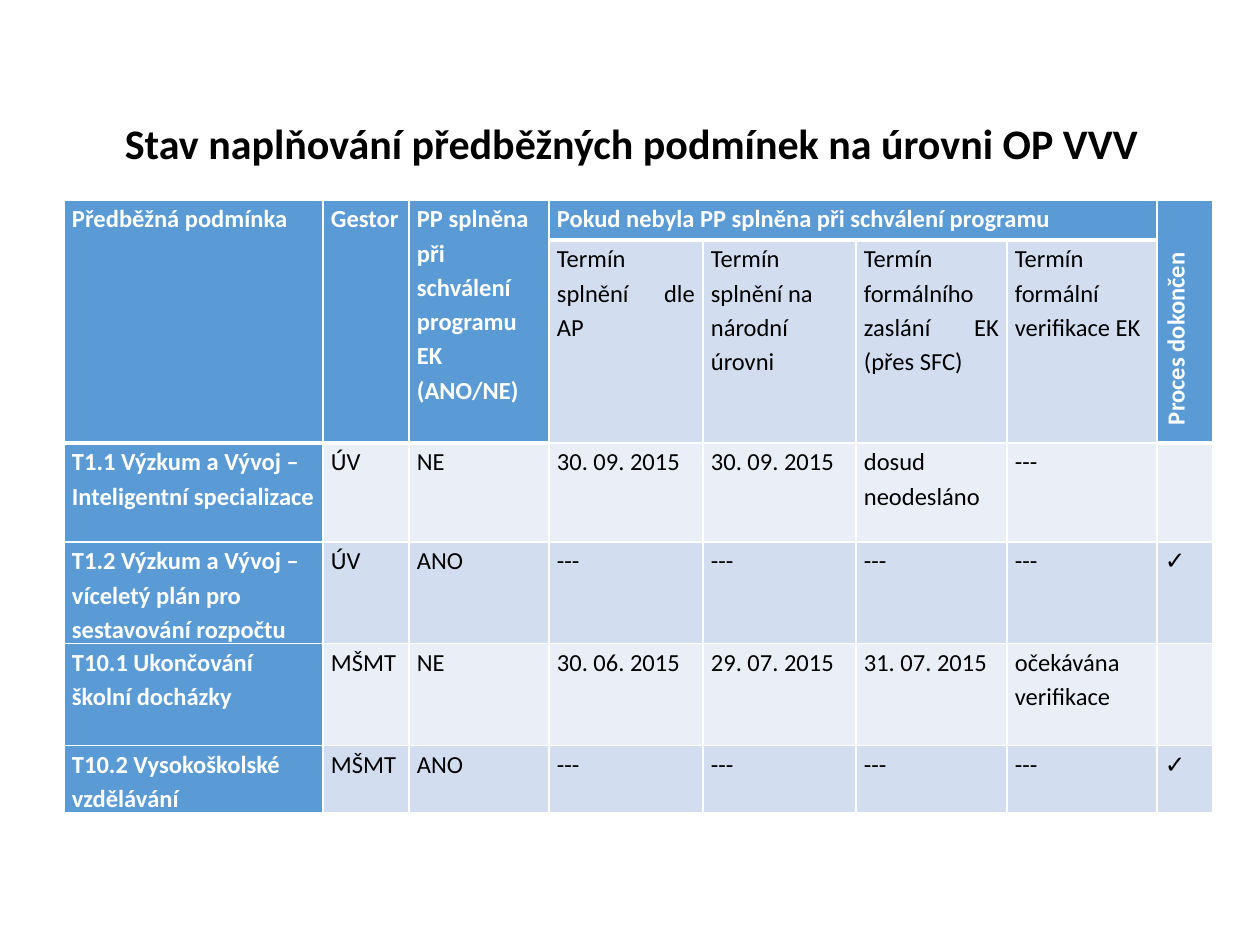
from pptx import Presentation
from pptx.dml.color import RGBColor
from pptx.enum.text import MSO_ANCHOR, PP_ALIGN
from pptx.oxml import parse_xml
from pptx.oxml.ns import nsdecls
from pptx.util import Emu, Pt

PX = 914400 // 126
FONT = "Calibri"
WHITE, BLACK, BLUE = "FFFFFF", "000000", "5B9BD5"
DARK_BAND, LIGHT_BAND = "D2DEEF", "EAEFF7"
COLUMN_WIDTHS = [259, 86, 140, 154, 153, 151, 150, 56]
ROW_HEIGHTS = [40, 203, 99, 101, 102, 67]
PROCESS_COLUMN = len(COLUMN_WIDTHS) - 1
HEADERS = {
    0: "Předběžná podmínka",
    1: "Gestor",
    2: "PP splněna při schválení programu EK (ANO/NE)",
    3: "Pokud nebyla PP splněna při schválení programu",
    PROCESS_COLUMN: "Proces dokončen",
}
DEADLINES = [
    "Termín splnění dle AP",
    "Termín splnění na národní úrovni",
    "Termín formálního zaslání EK (přes SFC)",
    "Termín formální verifikace EK",
]
JUSTIFIED = {HEADERS[0], HEADERS[3], DEADLINES[0], DEADLINES[2], DEADLINES[3]}
CONDITIONS = [
    ["T1.1 Výzkum a Vývoj – Inteligentní specializace", "ÚV", "NE",
     "30. 09. 2015", "30. 09. 2015", "dosud neodesláno", "---", ""],
    ["T1.2 Výzkum a Vývoj – víceletý plán pro sestavování rozpočtu", "ÚV", "ANO",
     "---", "---", "---", "---", "✓"],
    ["T10.1 Ukončování školní docházky", "MŠMT", "NE",
     "30. 06. 2015", "29. 07. 2015", "31. 07. 2015", "očekávána\nverifikace", ""],
    ["T10.2 Vysokoškolské vzdělávání", "MŠMT", "ANO",
     "---", "---", "---", "---", "✓"],
]


def px(length):
    return Emu(length * PX)


def color(value):
    return RGBColor.from_string(value)


def style_font(font, size, value, bold):
    font.name = FONT
    font.size = Pt(size)
    font.bold = bold
    font.color.rgb = color(value)


def add_title(slide, text):
    shape = slide.shapes.add_textbox(px(71), px(111), px(1121), px(65))
    frame = shape.text_frame
    frame.word_wrap = True
    paragraph = frame.paragraphs[0]
    paragraph.text = text
    paragraph.alignment = PP_ALIGN.CENTER
    style_font(paragraph.font, 24, BLACK, True)


def set_borders(cell, bottom):
    properties = cell._tc.get_or_add_tcPr()
    for side, width in (("L", 1), ("R", 1), ("T", 1), ("B", bottom)):
        properties.append(parse_xml(
            f'<a:ln{side} {nsdecls("a")} w="{Pt(width)}"><a:solidFill>'
            f'<a:srgbClr val="{WHITE}"/></a:solidFill></a:ln{side}>'))


def style_cell(cell, fill, bottom=1):
    set_borders(cell, bottom)
    cell.fill.solid()
    cell.fill.fore_color.rgb = color(fill)
    cell.margin_left = cell.margin_right = px(8)
    cell.margin_top = cell.margin_bottom = 0


def write_cell(cell, text, heading=False):
    cell.text = text
    for paragraph in cell.text_frame.paragraphs:
        paragraph.line_spacing = 1.15
        paragraph.alignment = PP_ALIGN.JUSTIFY if text in JUSTIFIED else PP_ALIGN.LEFT
        style_font(paragraph.font, 14, WHITE if heading else BLACK, heading)


def turn_upright(cell):
    cell.vertical_anchor = MSO_ANCHOR.MIDDLE
    cell._tc.get_or_add_tcPr().set("vert", "vert270")
    paragraph = cell.text_frame.paragraphs[0]
    paragraph._p.get_or_add_pPr().set("marL", str(px(10)))


def fill_header(table):
    for column in range(len(COLUMN_WIDTHS)):
        grouped = 3 <= column < PROCESS_COLUMN
        style_cell(table.cell(0, column), BLUE, 3)
        style_cell(table.cell(1, column), DARK_BAND if grouped else BLUE, 1 if grouped else 3)
        if not grouped:
            table.cell(0, column).merge(table.cell(1, column))
    table.cell(0, 3).merge(table.cell(0, PROCESS_COLUMN - 1))
    for column, text in HEADERS.items():
        write_cell(table.cell(0, column), text, True)
    for column, text in enumerate(DEADLINES, 3):
        write_cell(table.cell(1, column), text)
    turn_upright(table.cell(0, PROCESS_COLUMN))


def fill_conditions(table):
    for row, values in enumerate(CONDITIONS, 2):
        band = DARK_BAND if row % 2 else LIGHT_BAND
        for column, text in enumerate(values):
            cell = table.cell(row, column)
            heading = column == 0
            style_cell(cell, BLUE if heading else band)
            write_cell(cell, text, heading)


def add_conditions_table(slide):
    table = slide.shapes.add_table(
        len(ROW_HEIGHTS), len(COLUMN_WIDTHS), px(64), px(200),
        px(sum(COLUMN_WIDTHS)), px(sum(ROW_HEIGHTS))).table
    table.first_row = table.horz_banding = False
    for column, width in zip(table.columns, COLUMN_WIDTHS):
        column.width = px(width)
    for row, height in zip(table.rows, ROW_HEIGHTS):
        row.height = px(height)
    fill_header(table)
    fill_conditions(table)


def main():
    presentation = Presentation()
    presentation.slide_width = px(1260)
    presentation.slide_height = px(945)
    slide = presentation.slides.add_slide(presentation.slide_layouts[6])
    add_title(slide, "Stav naplňování předběžných podmínek na úrovni OP VVV")
    add_conditions_table(slide)
    presentation.save("out.pptx")


if __name__ == "__main__":
    main()
